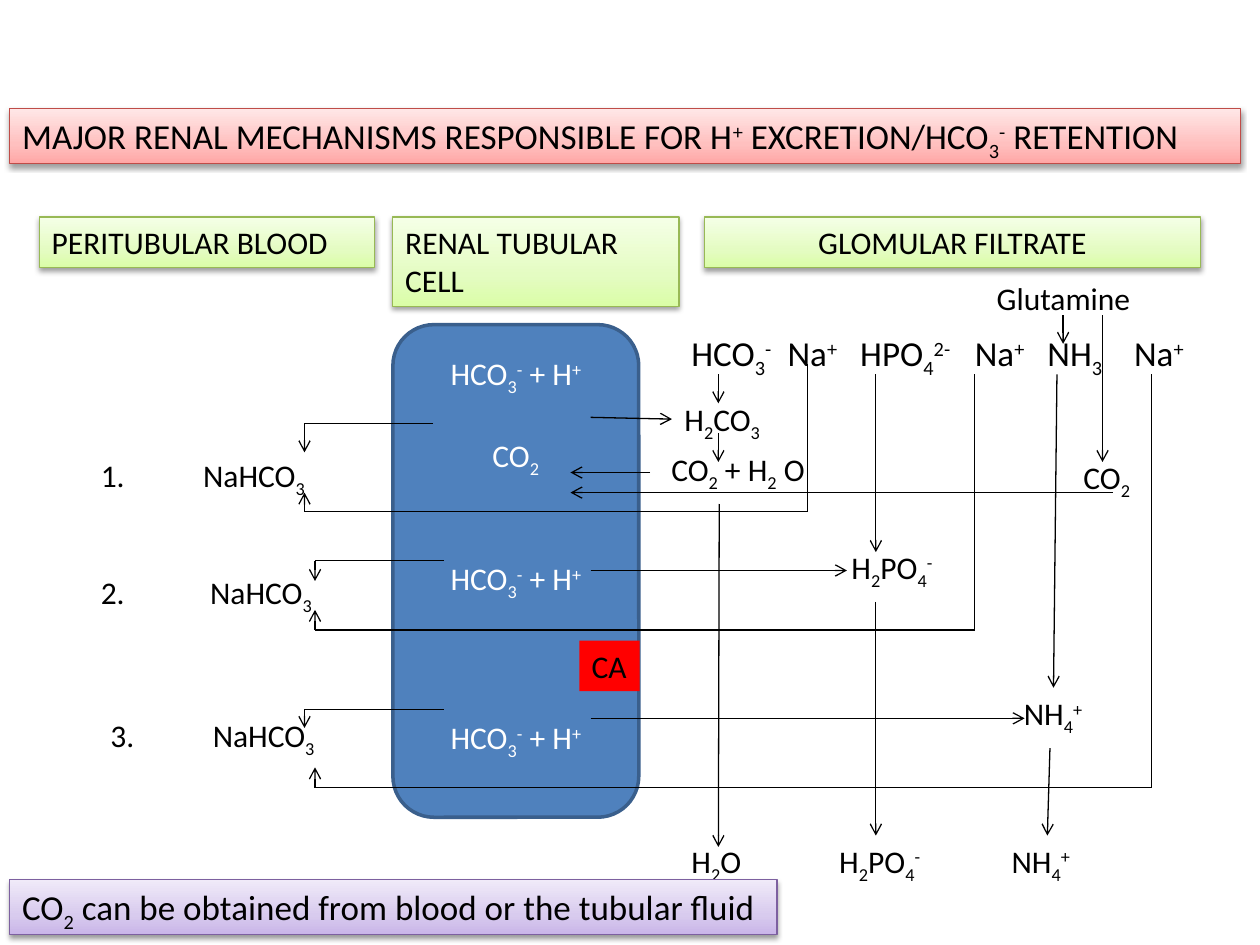
from copy import deepcopy
from dataclasses import dataclass
from itertools import pairwise

from lxml import etree
from pptx import Presentation
from pptx import util as u
from pptx.dml.color import RGBColor
from pptx.enum import shapes, text
from pptx.oxml import ns

FONT = "Calibri"
BLACK, WHITE = "000000", "FFFFFF"
LEFT, CENTER = text.PP_ALIGN.LEFT, text.PP_ALIGN.CENTER
BASELINES = {"_": "-25000", "^": "30000"}
ION_PAIR = "HCO|_3|^-| + H|^+"


@dataclass
class Theme:
    stops: tuple[str, str, str]
    line: str


@dataclass
class Label:
    """Text parts are split by |; a part led by _ is subscript, by ^ superscript."""
    words: str
    left: float
    top: float
    width: float
    height: float = 29
    size: float = 18
    align: text.PP_ALIGN = LEFT
    tabs: tuple[float, ...] = ()


GREEN = Theme(("DAFDA7", "E4FCC2", "F5FFE7"), "98B955")
RED = Theme(("FFA6A5", "FFC0BF", "FFE7E7"), "BF4C48")
PURPLE = Theme(("C9B5E8", "D8CBEE", "F0EAF9"), "7D60A0")

TITLE = Label("MAJOR RENAL MECHANISMS RESPONSIBLE FOR H|^+| EXCRETION/HCO|_3|^-| RETENTION",
              5.5, 62, 703.5, 31.5, 20)
BANNERS = [
    (Label("PERITUBULAR BLOOD", 22.5, 124, 191.5), GREEN),
    (Label("RENAL TUBULAR CELL", 224.5, 124, 163.5, 51), GREEN),
    (Label("GLOMULAR FILTRATE", 402.5, 124, 283.5, align=CENTER), GREEN),
    (Label("CO|_2| can be obtained from blood or the tubular fluid",
           5.5, 502.5, 438.5, 31.5, 20), PURPLE),
]
# Label and the space before it inside the cell
CELL_LINES = [(ION_PAIR, 0), ("CO|_2", 22.5), (ION_PAIR, 45.5), (ION_PAIR, 66.5)]
LABELS = [
    Label("HCO|_3|^-|\tNa|^+|\tHPO|_4|^2-|\tNa|^+|\tNH|_3|\tNa|^+",
          388, 186, 337.5, 31.5, 20, tabs=(55, 96.5, 162, 203.5, 253)),
    Label("H|_2|CO|_3", 384, 225, 72),
    Label("CO|_2| + H|_2| O", 376.5, 253.5, 96),
    Label("H|_2|O", 388, 477.5, 44),
    Label("H|_2|PO|_4|^-", 479.5, 309.5, 72),
    Label("H|_2|PO|_4|^-", 472.5, 477.5, 72),
    Label("NH|_4|^+", 578, 393, 63),
    Label("NH|_4|^+", 571, 477.5, 63),
    Label("1.|\tNaHCO|_3", 50.5, 257, 135.5, tabs=(58.5,)),
    Label("2.|\tNaHCO|_3", 50.5, 324, 140.5, tabs=(62.5,)),
    Label("3.|\tNaHCO|_3", 56, 405.5, 142.5, tabs=(58.5,)),
    Label("Glutamine", 562.5, 156, 100),
    Label("CO|_2", 612, 258, 46),
]
# Each route is a run of corner points; its last stretch carries the arrowhead
ROUTES = [
    # Filtrate reactions, downwards
    [(410.5, 214), (410.5, 230.5)],
    [(410.5, 247.5), (410.5, 264)],
    [(411, 288), (410.5, 484)],
    [(500.5, 214), (500.5, 315.5)],
    [(500.5, 344), (500.5, 477.5)],
    [(604, 214), (602, 393)],
    [(600, 427.5), (598.5, 477.5)],
    [(607.5, 180), (607.5, 196.5)],
    [(630, 180), (630, 264)],
    # Hydrogen ions leaving the cell
    [(337.5, 238.5), (384, 239.5)],
    [(337.5, 326), (484, 326)],
    [(337.5, 410.5), (585.5, 410.5)],
    # Carbon dioxide entering the cell
    [(371.5, 270), (326, 270)],
    [(636, 281.5), (326, 281.5)],
    # Sodium passing to the blood
    [(461.5, 208), (461.5, 292.5), (174, 292.5), (174, 281.5)],
    [(557, 214), (557, 360), (180, 360), (180, 348.5)],
    [(658, 214), (658, 450), (180, 450), (180, 438.5)],
    # Bicarbonate passing to the blood
    [(247.5, 242), (174, 242), (174, 258.5)],
    [(253.5, 320.5), (180, 320.5), (180, 332)],
    [(253.5, 405.5), (174, 405.5), (174, 416)],
]


def color(value: str) -> RGBColor:
    return RGBColor.from_string(value)


def child(parent, tag: str, **attributes: str):
    return etree.SubElement(parent, ns.qn(tag), attributes)


def write(para, words: str, size: float, ink: str) -> None:
    for part in filter(None, words.split("|")):
        span = para.add_run()
        span.text = part.lstrip("_^")
        span.font.name, span.font.size = FONT, u.Pt(size)
        span.font.color.rgb = color(ink)
        if part[0] in BASELINES:
            span.font._element.set("baseline", BASELINES[part[0]])


def fill_label(box, label: Label) -> None:
    frame = box.text_frame
    frame.word_wrap = True
    frame.auto_size = text.MSO_AUTO_SIZE.NONE
    frame.vertical_anchor = text.MSO_ANCHOR.TOP
    para = frame.paragraphs[0]
    para.alignment = label.align
    if label.tabs:
        stops = child(para._p.get_or_add_pPr(), "a:tabLst")
        for position in label.tabs:
            child(stops, "a:tab", pos=str(u.Pt(position)), algn="l")
    write(para, label.words, label.size, BLACK)


def frame_of(label: Label) -> list[u.Pt]:
    return [u.Pt(n) for n in (label.left, label.top, label.width, label.height)]


def style_banner(box, theme: Theme) -> None:
    """Give a box its three-stop gradient, thin outline and soft shadow."""
    box.fill.gradient()
    box.fill.gradient_angle = 90
    stop_list = box._element.spPr.find(".//" + ns.qn("a:gsLst"))
    stop_list.append(deepcopy(stop_list[-1]))
    for stop, position, tone in zip(box.fill.gradient_stops, (0, 0.35, 1), theme.stops):
        stop.position = position
        stop.color.rgb = color(tone)
    box.line.color.rgb = color(theme.line)
    box.line.width = u.Pt(0.75)
    box.shadow.inherit = False
    effects = box._element.spPr.find(ns.qn("a:effectLst"))
    shadow = child(effects, "a:outerShdw", blurRad=str(u.Pt(3.1)), dist=str(u.Pt(1.6)),
                   dir="5400000", rotWithShape="0")
    child(child(shadow, "a:srgbClr", val=BLACK), "a:alpha", val="38000")


def add_box(page, label: Label):
    box = page.shapes.add_shape(shapes.MSO_SHAPE.RECTANGLE, *frame_of(label))
    box.shadow.inherit = False
    fill_label(box, label)
    return box


def add_cell(page) -> None:
    cell = page.shapes.add_shape(shapes.MSO_SHAPE.ROUNDED_RECTANGLE,
                                 u.Pt(224.5), u.Pt(185.5), u.Pt(140.5), u.Pt(281.5))
    cell.shadow.inherit = False
    cell.fill.solid()
    cell.fill.fore_color.rgb = color("4F81BD")
    cell.line.color.rgb = color("3A5F8C")
    cell.line.width = u.Pt(2)
    frame = cell.text_frame
    frame.word_wrap = True
    frame.vertical_anchor = text.MSO_ANCHOR.TOP
    frame.margin_top = u.Pt(10)
    for index, (words, gap) in enumerate(CELL_LINES):
        para = frame.add_paragraph() if index else frame.paragraphs[0]
        para.alignment = CENTER
        para.space_before = u.Pt(gap)
        write(para, words, 18, WHITE)


def add_route(page, points: list[tuple[float, float]]) -> None:
    for start, end in pairwise(points):
        line = page.shapes.add_connector(shapes.MSO_CONNECTOR.STRAIGHT,
                                         *(u.Pt(n) for n in start + end))
        line.line.color.rgb = color(BLACK)
        line.line.width = u.Pt(0.75)
        child(line._element.spPr, "a:effectLst")
    child(line.line._get_or_add_ln(), "a:tailEnd", type="arrow")


def main() -> None:
    deck = Presentation()
    deck.slide_width, deck.slide_height = u.Pt(720), u.Pt(540)
    page = deck.slides.add_slide(deck.slide_layouts[5])

    title = page.shapes.title
    title.left, title.top, title.width, title.height = frame_of(TITLE)
    fill_label(title, TITLE)
    style_banner(title, RED)

    add_cell(page)
    for label in LABELS:
        fill_label(page.shapes.add_textbox(*frame_of(label)), label)
    for points in ROUTES:
        add_route(page, points)
    for label, theme in BANNERS:
        style_banner(add_box(page, label), theme)

    enzyme = add_box(page, Label("CA", 331, 366, 34.5))
    enzyme.text_frame.word_wrap = False
    enzyme.fill.solid()
    enzyme.fill.fore_color.rgb = color("FF0000")
    enzyme.line.fill.background()

    deck.save("out.pptx")


if __name__ == "__main__":
    main()
